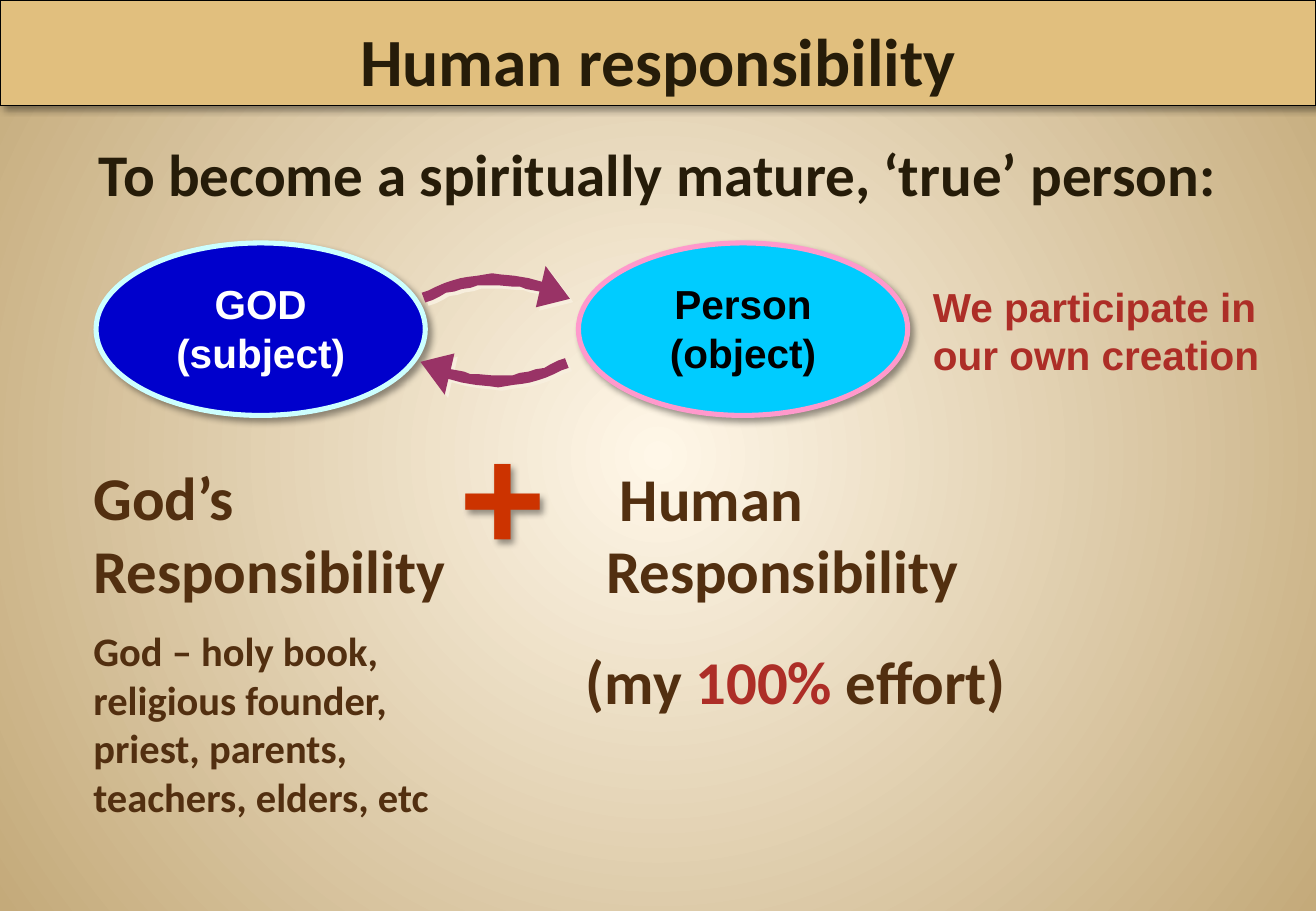
from pptx import Presentation
from pptx.dml.color import RGBColor
from pptx.enum.shapes import MSO_SHAPE
from pptx.enum.text import MSO_ANCHOR, PP_ALIGN
from pptx.oxml import parse_xml
from pptx.oxml.ns import nsdecls, qn
from pptx.util import Inches, Pt

CREAM = RGBColor(0xFF, 0xF7, 0xE8)
SAND = RGBColor(0xC4, 0xAA, 0x7A)
GOLD = RGBColor(0xE1, 0xBF, 0x7E)
INK = RGBColor(0x26, 0x1C, 0x09)
BROWN = RGBColor(0x52, 0x2F, 0x10)
RED = RGBColor(0xAD, 0x2E, 0x27)
ORANGE = RGBColor(0xCC, 0x33, 0x00)
PLUM = RGBColor(0x99, 0x33, 0x66)
PALE = RGBColor(0xF7, 0xEE, 0xDD)
NAVY = RGBColor(0x00, 0x00, 0xCC)
ICE = RGBColor(0xCC, 0xFF, 0xFF)
SKY = RGBColor(0x00, 0xCC, 0xFF)
PINK = RGBColor(0xFF, 0x99, 0xCC)
WHITE = RGBColor(0xFF, 0xFF, 0xFF)
BLACK = RGBColor(0x00, 0x00, 0x00)

SLIDE_WIDTH = 10.83

# Upper arrow outline, in hundredths of an inch
ARROW_OUTLINE = [
    (444, 240), (433, 238), (428, 236), (422, 236), (411, 235), (400, 235),
    (393, 235), (387, 237), (380, 238), (374, 240), (367, 241), (362, 244),
    (356, 247), (350, 249), (347, 241), (353, 239), (359, 236), (366, 233),
    (372, 231), (379, 229), (385, 228), (393, 227), (399, 226), (405, 225),
    (412, 226), (423, 227), (429, 228), (435, 229), (446, 232), (449, 219),
    (469, 246), (441, 253),
]


def paint_background(slide):
    fill = slide.background.fill
    fill.gradient()
    for stop, color in zip(fill.gradient_stops, (CREAM, SAND)):
        stop.color.rgb = color
    gradient = slide.element.find(".//" + qn("a:gradFill"))
    for linear in gradient.findall(qn("a:lin")):
        gradient.remove(linear)
    gradient.find(qn("a:gsLst")).addnext(parse_xml(
        f'<a:path {nsdecls("a")} path="circle">'
        '<a:fillToRect l="50000" t="50000" r="50000" b="50000"/></a:path>'))


def cast_shadow(shape, color=BLACK, opacity=40, blur=4, distance=3):
    shape.shadow.inherit = False
    effects = shape.element.spPr.find(qn("a:effectLst"))
    effects.append(parse_xml(
        f'<a:outerShdw {nsdecls("a")} blurRad="{Pt(blur)}" dist="{Pt(distance)}" '
        f'dir="2700000" algn="ctr" rotWithShape="0"><a:srgbClr val="{color}">'
        f'<a:alpha val="{opacity * 1000}"/></a:srgbClr></a:outerShdw>'))


def add_panel(slide, kind, box, fill, line, line_width):
    panel = slide.shapes.add_shape(kind, *map(Inches, box))
    panel.fill.solid()
    panel.fill.fore_color.rgb = fill
    panel.line.color.rgb = line
    panel.line.width = Pt(line_width)
    cast_shadow(panel)
    return panel


def write(frame, paragraphs, font, align=PP_ALIGN.LEFT, gap=0):
    """Fill a frame; each paragraph is a list of (text, size, color) runs."""
    frame.word_wrap = True
    for index, runs in enumerate(paragraphs):
        paragraph = frame.add_paragraph() if index else frame.paragraphs[0]
        paragraph.alignment = align
        if index:
            paragraph.space_before = Pt(gap)
        for text, size, color in runs:
            run = paragraph.add_run()
            run.text = text
            run.font.name = font
            run.font.size = Pt(size)
            run.font.bold = True
            run.font.color.rgb = color


def add_text(slide, box, paragraphs, font="Calibri", **layout):
    label = slide.shapes.add_textbox(*map(Inches, box))
    write(label.text_frame, paragraphs, font, **layout)
    return label


def add_role(slide, left, fill, line, color, name, role):
    add_panel(slide, MSO_SHAPE.OVAL, (left, 2, 2.71, 1.42), fill, line, 3)
    add_text(slide, (left + 0.36, 2.25, 1.99, 0.91),
             [[(name, 24, color)], [(role, 24, color)]],
             font="Arial", align=PP_ALIGN.CENTER)


def add_curved_arrow(slide, outline):
    builder = slide.shapes.build_freeform(*outline[0], scale=Inches(0.01))
    builder.add_line_segments(outline[1:], close=True)
    arrow = builder.convert_to_shape()
    arrow.fill.solid()
    arrow.fill.fore_color.rgb = PLUM
    arrow.line.fill.background()
    cast_shadow(arrow, PALE, opacity=100, blur=0, distance=2.8)


def add_title(slide, text):
    banner = add_panel(slide, MSO_SHAPE.RECTANGLE, (0, 0, SLIDE_WIDTH, 0.87),
                       GOLD, BLACK, 0.75)
    banner.text_frame.vertical_anchor = MSO_ANCHOR.BOTTOM
    write(banner.text_frame, [[(text, 40, INK)]], "Calibri", PP_ALIGN.CENTER)


def main():
    prs = Presentation()
    prs.slide_width, prs.slide_height = Inches(SLIDE_WIDTH), Inches(7.5)
    slide = prs.slides.add_slide(prs.slide_layouts[6])
    paint_background(slide)

    add_text(slide, (0, 1.08, SLIDE_WIDTH, 0.69),
             [[("To become a spiritually mature, ‘true’ person:", 35, INK)]],
             align=PP_ALIGN.CENTER)

    add_role(slide, 0.79, NAVY, ICE, WHITE, "GOD", "(subject)")
    add_role(slide, 4.76, SKY, PINK, BLACK, "Person", "(object)")
    add_curved_arrow(slide, ARROW_OUTLINE)
    # The lower arrow is the upper one turned by half a circle
    add_curved_arrow(slide, [(815 - x, 544 - y) for x, y in ARROW_OUTLINE])

    add_text(slide, (0.67, 3.74, 3.22, 3.13),
             [[("God’s Responsibility", 36, BROWN)],
              [("God – holy book, religious founder, priest, parents, "
                "teachers, elders, etc", 24, BROWN)]], gap=12)
    add_text(slide, (4.89, 3.74, 3.58, 1.31),
             [[(" Human Responsibility", 36, BROWN)]])
    add_text(slide, (7.58, 2.27, 3.07, 0.91),
             [[("We participate in our own creation", 24, RED)]], font="Arial")
    plus = add_text(slide, (3.68, 3.27, 0.9, 1.57), [[("+", 88, ORANGE)]],
                    font="Arial")
    cast_shadow(plus)
    add_text(slide, (2.3, 5.25, 8.5, 0.7),
             [[("(my ", 36, BROWN), ("100%", 36, RED), (" effort)", 36, BROWN)]],
             align=PP_ALIGN.CENTER)

    add_title(slide, "Human responsibility")
    prs.save("out.pptx")


if __name__ == "__main__":
    main()
